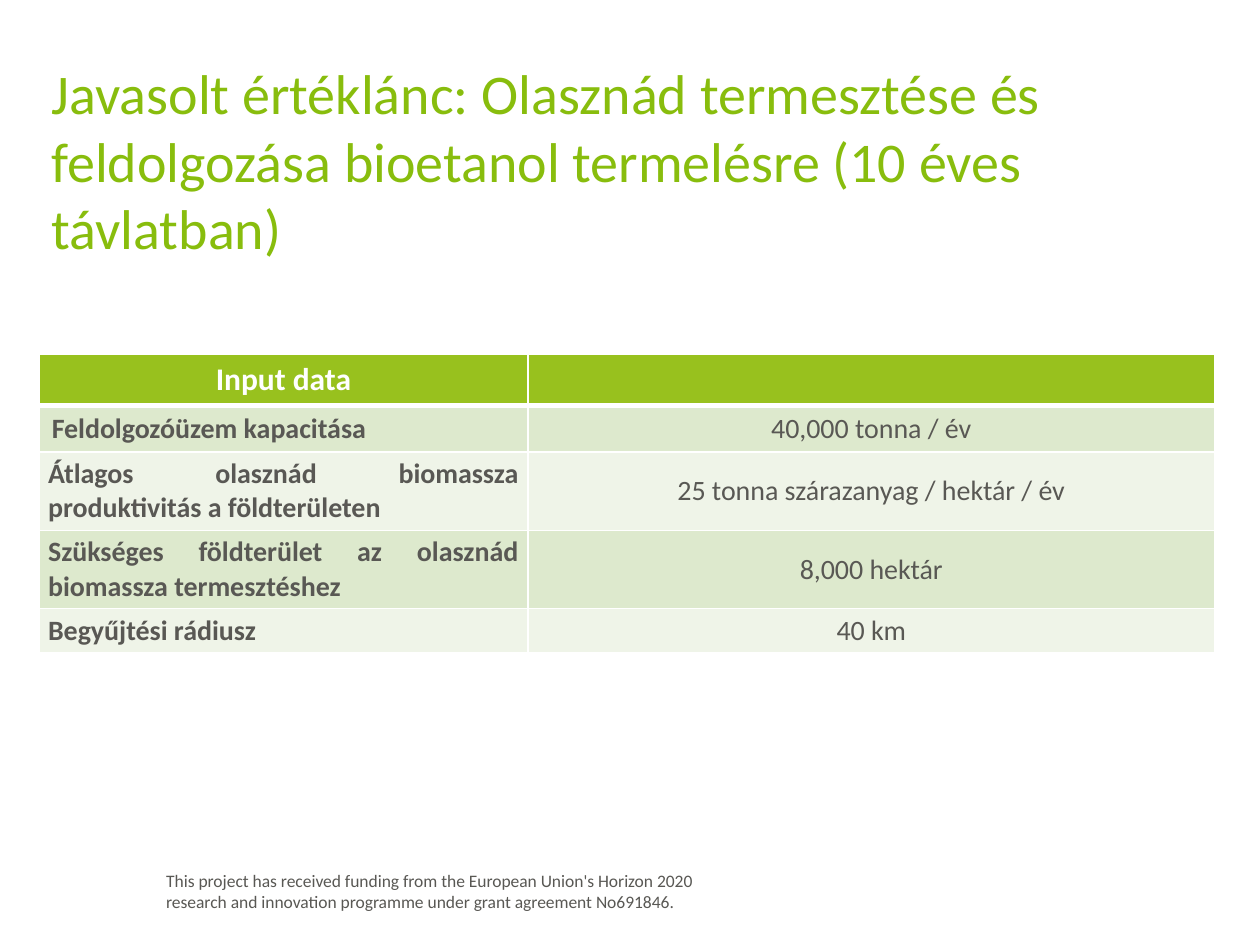
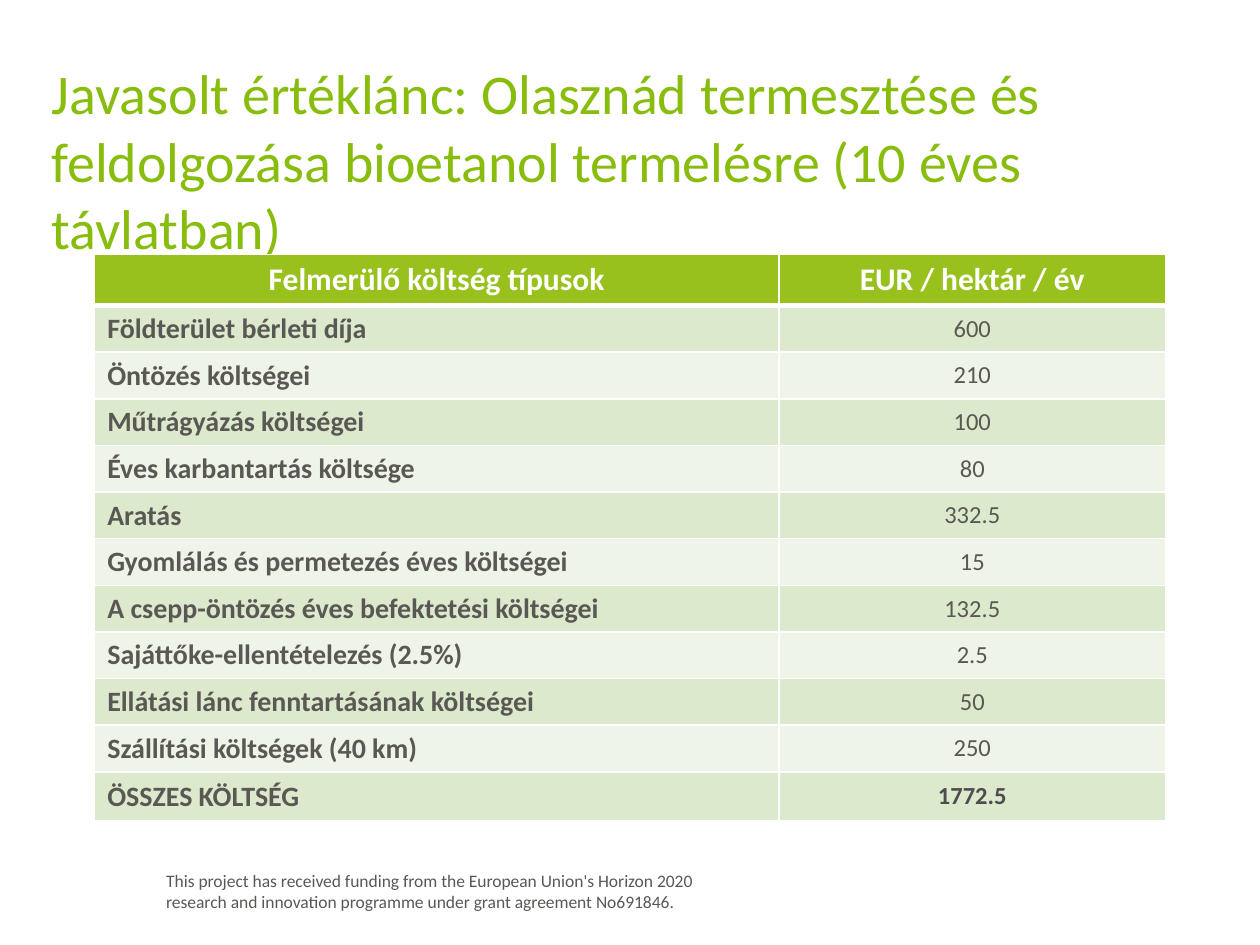
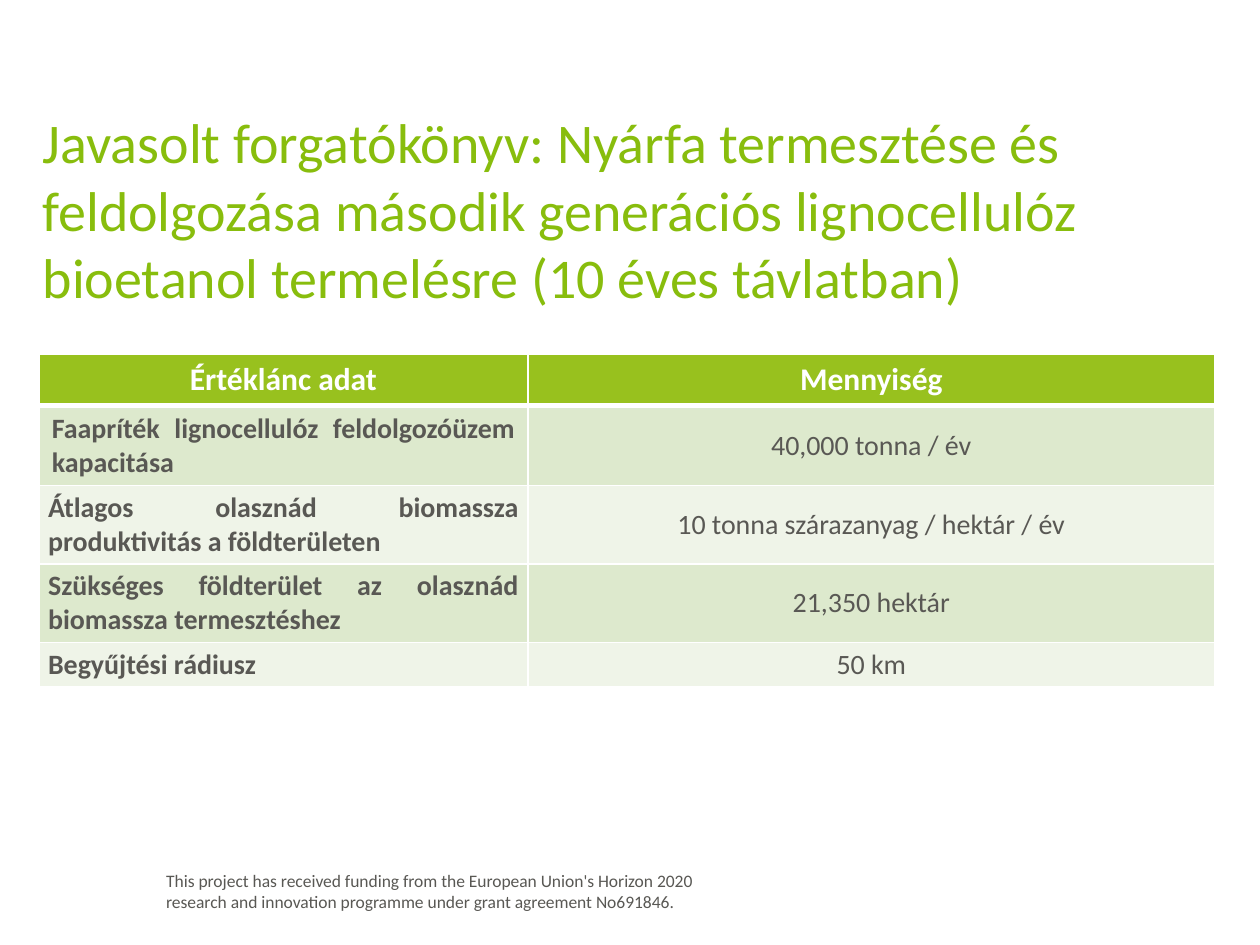
from lxml import etree
from pptx import Presentation
from pptx.dml.color import RGBColor
from pptx.enum.text import MSO_ANCHOR, PP_ALIGN
from pptx.oxml.ns import qn
from pptx.util import Cm, Pt

LEFT, CENTER, JUSTIFY = PP_ALIGN.LEFT, PP_ALIGN.CENTER, PP_ALIGN.JUSTIFY
TOP, MIDDLE, BOTTOM = MSO_ANCHOR.TOP, MSO_ANCHOR.MIDDLE, MSO_ANCHOR.BOTTOM

FONT = "Calibri"
WHITE = RGBColor(0xFF, 0xFF, 0xFF)
GREY = RGBColor(0x59, 0x58, 0x54)
DARK = RGBColor(0x4D, 0x4D, 0x4D)
TITLE_GREEN = RGBColor(0x88, 0xBD, 0x0D)
HEADER_GREEN = RGBColor(0x98, 0xC1, 0x1E)
BANDS = [RGBColor(0xDD, 0xE9, 0xCD), RGBColor(0xEF, 0xF4, 0xE8)]

# Content
FOOTER = [
    "This project has received funding from the European Union's Horizon 2020",
    "research and innovation programme under grant agreement No691846.",
]
REED_TITLE = ("Javasolt értéklánc: Olasznád termesztése és feldolgozása "
              "bioetanol termelésre (10 éves távlatban)")
POPLAR_TITLE = ("Javasolt forgatókönyv: Nyárfa termesztése és feldolgozása második "
                "generációs lignocellulóz bioetanol termelésre (10 éves távlatban)")
YIELD = "Átlagos olasznád biomassza produktivitás a földterületen"
LAND = "Szükséges földterület az olasznád biomassza termesztéshez"
RADIUS = "Begyűjtési rádiusz"

REED_INPUTS = [
    ("Input data", ""),
    ("Feldolgozóüzem kapacitása", "40,000 tonna / év"),
    (YIELD, "25 tonna szárazanyag / hektár / év"),
    (LAND, "8,000 hektár"),
    (RADIUS, "40 km"),
]
REED_COSTS = [
    ("Felmerülő költség típusok", "EUR / hektár / év"),
    ("Földterület bérleti díja", "600"),
    ("Öntözés költségei", "210"),
    ("Műtrágyázás költségei", "100"),
    ("Éves karbantartás költsége", "80"),
    ("Aratás", "332.5"),
    ("Gyomlálás és permetezés éves költségei", "15"),
    ("A csepp-öntözés éves befektetési költségei", "132.5"),
    ("Sajáttőke-ellentételezés (2.5%)", "2.5"),
    ("Ellátási lánc fenntartásának költségei", "50"),
    ("Szállítási költségek (40 km)", "250"),
    ("ÖSSZES KÖLTSÉG", "1772.5"),
]
POPLAR_INPUTS = [
    ("Értéklánc adat", "Mennyiség"),
    ("Faapríték lignocellulóz feldolgozóüzem kapacitása", "40,000 tonna / év"),
    (YIELD, "10 tonna szárazanyag / hektár / év"),
    (LAND, "21,350 hektár"),
    (RADIUS, "50 km"),
]


def write(tf, lines, size, color, bold=False, align=LEFT):
    """Fill a text frame with one paragraph per line."""
    for i, line in enumerate(lines):
        p = tf.paragraphs[0] if i == 0 else tf.add_paragraph()
        p.alignment = align
        p.font.size = Pt(size)
        if line:
            r = p.add_run()
            r.text = line
            r.font.name, r.font.size, r.font.bold = FONT, Pt(size), bold
            r.font.color.rgb = color


def add_text(s, lines, left, top, width, height, size, color, anchor=TOP):
    tf = s.shapes.add_textbox(Cm(left), Cm(top), Cm(width), Cm(height)).text_frame
    tf.word_wrap = True
    tf.vertical_anchor = anchor
    write(tf, lines, size, color)


def set_borders(cell, **widths):
    """Draw white cell borders; widths in points by side (L, R, T, B)."""
    tcPr = cell._tc.get_or_add_tcPr()
    for side, width in widths.items():
        ln = etree.SubElement(tcPr, qn(f"a:ln{side}"), w=str(Pt(width)))
        fill = etree.SubElement(ln, qn("a:solidFill"))
        etree.SubElement(fill, qn("a:srgbClr"), val=str(WHITE))


def add_data_table(s, rows, left, top, col_widths, row_heights):
    """Add a banded table and return it with its body cells still empty."""
    table = s.shapes.add_table(len(rows), len(col_widths), Cm(left), Cm(top),
                               Cm(sum(col_widths)), Cm(sum(row_heights))).table
    table.horz_banding = False
    for column, width in zip(table.columns, col_widths):
        column.width = Cm(width)
    for i, height in enumerate(row_heights):
        table.rows[i].height = Cm(height)
        for j, text in enumerate(rows[i]):
            cell = table.cell(i, j)
            set_borders(cell, L=1, R=1, T=3 if i == 1 else 1, B=3 if i == 0 else 1)
            cell.fill.solid()
            cell.fill.fore_color.rgb = BANDS[(i - 1) % 2] if i else HEADER_GREEN
            if i == 0:
                write(cell.text_frame, [text], 18, WHITE, bold=True, align=CENTER)
            else:
                cell.vertical_anchor = MIDDLE
    return table


def add_inputs(s, rows, first_height):
    heights = [1.03, first_height, 1.58, 1.58, 0.89]
    table = add_data_table(s, rows, 0.79, 7.14, [9.85, 13.85], heights)
    for i, (label, value) in enumerate(rows[1:], 1):
        name, amount = table.cell(i, 0), table.cell(i, 1)
        write(name.text_frame, [label], 16, GREY, bold=True, align=JUSTIFY)
        write(amount.text_frame, [value], 16, GREY, align=CENTER)
        if i > 1:
            name.vertical_anchor = BOTTOM
            for cell in (name, amount):
                cell.margin_left = cell.margin_right = Cm(0.18)
                cell.margin_top = cell.margin_bottom = Cm(0.1)


def add_costs(s, rows):
    heights = [1.03] + [0.94] * (len(rows) - 2) + [0.99]
    table = add_data_table(s, rows, 1.91, 5.13, [13.79, 7.8], heights)
    for i, (label, value) in enumerate(rows[1:], 1):
        total = i == len(rows) - 1
        write(table.cell(i, 0).text_frame, [label], 16, GREY, bold=True)
        write(table.cell(i, 1).text_frame, [value], 14, DARK if total else GREY,
              bold=total, align=CENTER)


def add_slide(prs, title, left=0.79, top=2.13):
    """Add a slide with the shared footer and title."""
    s = prs.slides.add_slide(prs.slide_layouts[6])
    add_text(s, FOOTER, 3.1, 17.42, 12.19, 1.12, 10, GREY)
    add_text(s, [title], left, top, 24.05, 2.18, 32, TITLE_GREEN, MIDDLE)
    return s


def main():
    prs = Presentation()
    prs.slide_width, prs.slide_height = Cm(25.4), Cm(19.05)
    add_inputs(add_slide(prs, REED_TITLE), REED_INPUTS, 0.94)
    add_costs(add_slide(prs, REED_TITLE), REED_COSTS)
    add_inputs(add_slide(prs, POPLAR_TITLE, 0.61, 3.12), POPLAR_INPUTS, 1.62)
    prs.save("out.pptx")


if __name__ == "__main__":
    main()
